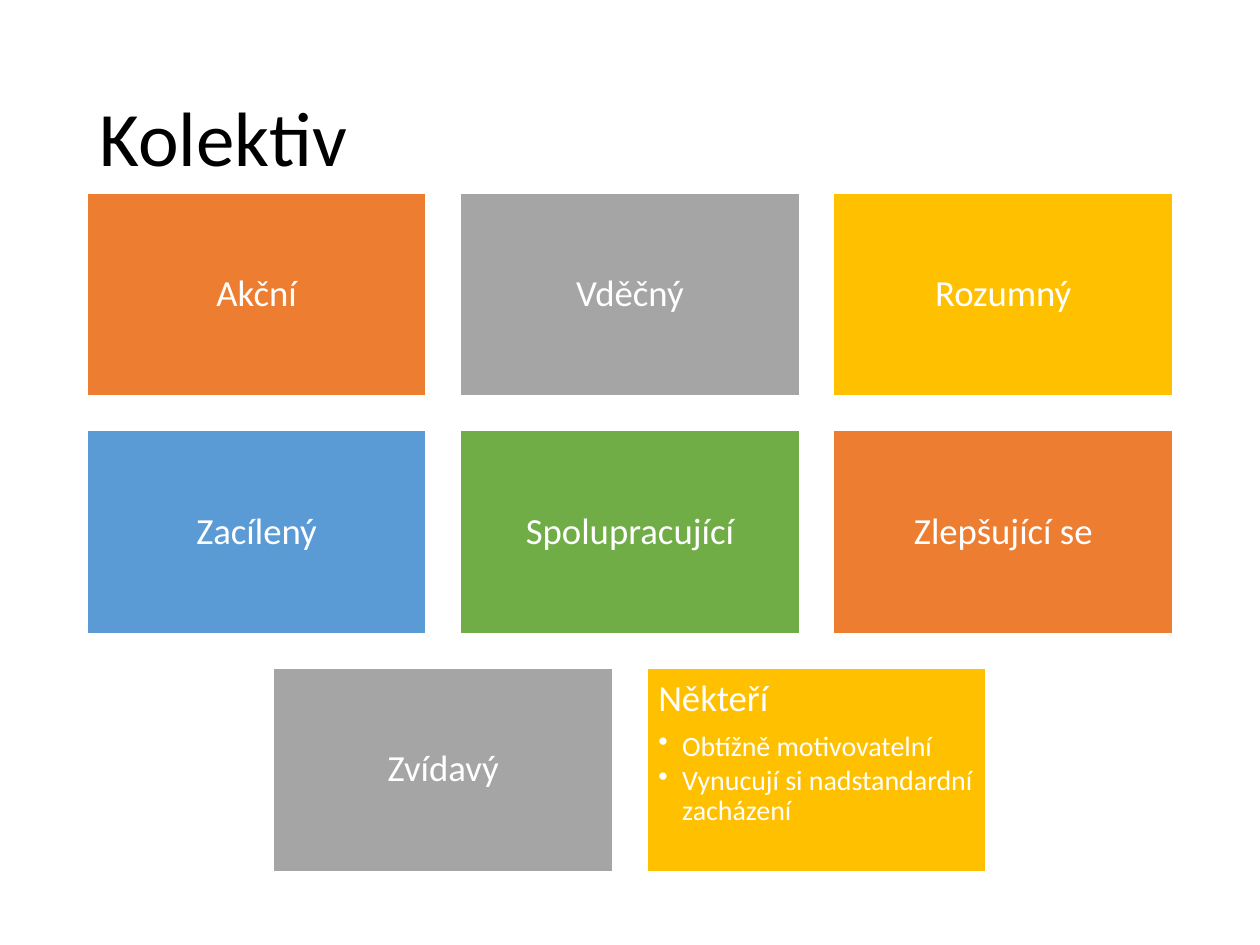
from dataclasses import dataclass

from lxml.etree import SubElement
from pptx import Presentation
from pptx.dml.color import RGBColor
from pptx.enum.shapes import MSO_SHAPE
from pptx.enum.text import MSO_ANCHOR, PP_ALIGN
from pptx.oxml.ns import qn
from pptx.util import Emu, Inches, Pt


@dataclass(frozen=True)
class Theme:
    """Colours, font and type sizes of the slide."""
    font: str = "Calibri"
    ink: str = "000000"
    paper: str = "FFFFFF"
    orange: str = "ED7D31"
    grey: str = "A5A5A5"
    gold: str = "FFC000"
    blue: str = "5B9BD5"
    green: str = "70AD47"
    title: int = 44
    label: int = 21
    bullet: int = 16


T = Theme()
COLS = 3
GAP = 0.1
RATIO = 0.6
TRAITS = [
    ("Akční", T.orange, []),
    ("Vděčný", T.grey, []),
    ("Rozumný", T.gold, []),
    ("Zacílený", T.blue, []),
    ("Spolupracující", T.green, []),
    ("Zlepšující se", T.orange, []),
    ("Zvídavý", T.grey, []),
    ("Někteří", T.gold, ["Obtížně motivovatelní", "Vynucují si nadstandardní zacházení"]),
]


def apply(obj, **values):
    """Set each named attribute of an object."""
    for name, value in values.items():
        setattr(obj, name, value)


def write(p, text, size, color, **values):
    """Fill a paragraph with one formatted run."""
    apply(p, line_spacing=0.9, **values)
    r = p.add_run()
    r.text = text
    apply(r.font, name=T.font, size=Pt(size))
    r.font.color.rgb = RGBColor.from_string(color)


def add_bullet(p):
    """Give a paragraph a round bullet with a hanging indent."""
    pPr = p._p.get_or_add_pPr()
    indent = Inches(0.19)
    pPr.set("marL", str(indent))
    pPr.set("indent", str(-indent))
    SubElement(pPr, qn("a:buChar")).set("char", "•")


def place_title(s, box, text):
    """Place the title placeholder in its box."""
    sp = s.shapes.title
    apply(sp, **dict(zip(("left", "top", "width", "height"), box)))
    tf = sp.text_frame
    apply(tf, vertical_anchor=MSO_ANCHOR.MIDDLE, word_wrap=True)
    write(tf.paragraphs[0], text, T.title, T.ink, alignment=PP_ALIGN.LEFT)


def add_card(s, box, label, color, points):
    """Draw one trait card, with its points if it has any."""
    sp = s.shapes.add_shape(MSO_SHAPE.RECTANGLE, *box)
    sp.shadow.inherit = False
    sp.fill.solid()
    sp.fill.fore_color.rgb = RGBColor.from_string(color)
    sp.line.color.rgb = RGBColor.from_string(T.paper)
    sp.line.width = Pt(1)
    tf = sp.text_frame
    sides = ("left", "top", "right", "bottom")
    apply(tf, word_wrap=True,
          vertical_anchor=MSO_ANCHOR.TOP if points else MSO_ANCHOR.MIDDLE,
          **{f"margin_{side}": Inches(0.09) for side in sides})
    write(tf.paragraphs[0], label, T.label, T.paper, space_after=Pt(0.35 * T.label),
          alignment=PP_ALIGN.LEFT if points else PP_ALIGN.CENTER)
    for point in points:
        p = tf.add_paragraph()
        write(p, point, T.bullet, T.paper, level=1, alignment=PP_ALIGN.LEFT,
              space_after=Pt(0.15 * T.bullet))
        add_bullet(p)


def add_cards(s, box, traits):
    """Lay the cards out in rows, each centred in the box."""
    left, top, width = box
    w = width / (COLS + GAP * (COLS - 1))
    h, gap = RATIO * w, GAP * w
    for start in range(0, len(traits), COLS):
        row = traits[start:start + COLS]
        x = left + (COLS - len(row)) * (w + gap) / 2
        y = top + start // COLS * (h + gap)
        for i, trait in enumerate(row):
            add_card(s, [Emu(int(v)) for v in (x + i * (w + gap), y, w, h)], *trait)


def main():
    """Build and save the slide."""
    prs = Presentation()
    apply(prs, slide_width=Inches(10), slide_height=Inches(7.5))
    s = prs.slides.add_slide(prs.slide_layouts[5])
    left, width = Inches(0.69), Inches(8.62)
    place_title(s, (left, Inches(0.4), width, Inches(1.45)), "Kolektiv")
    add_cards(s, (left, Inches(1.53), width), TRAITS)
    prs.save("out.pptx")


if __name__ == "__main__":
    main()
